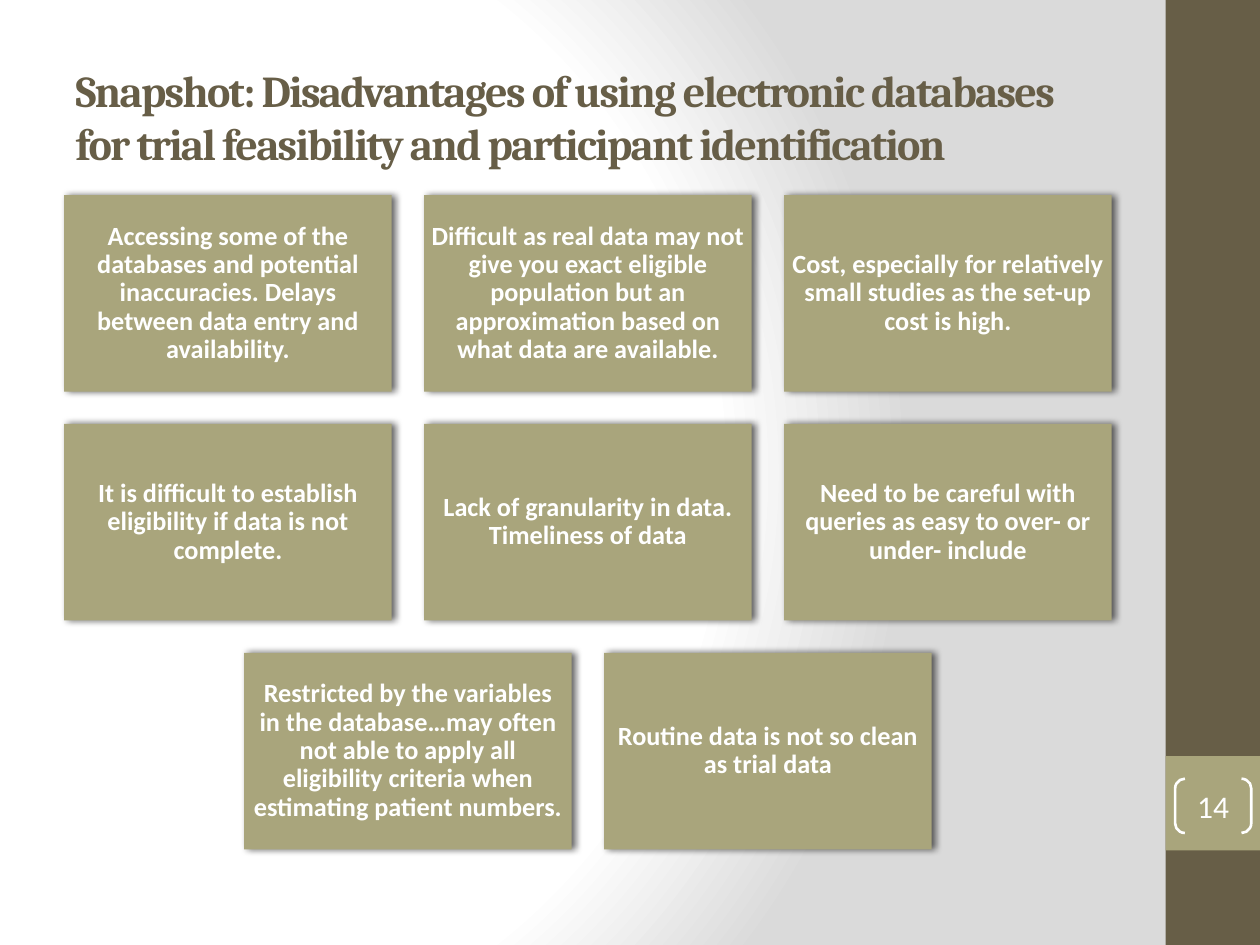
from dataclasses import dataclass

from lxml import etree
from pptx import Presentation
from pptx.dml.color import RGBColor
from pptx.enum.shapes import MSO_SHAPE
from pptx.enum.text import MSO_ANCHOR, MSO_AUTO_SIZE, PP_ALIGN
from pptx.oxml import parse_xml
from pptx.oxml.ns import nsdecls, qn
from pptx.util import Pt

RECT, BRACKETS = MSO_SHAPE.RECTANGLE, MSO_SHAPE.DOUBLE_BRACKET
LEFT, CENTER = PP_ALIGN.LEFT, PP_ALIGN.CENTER
MIDDLE = MSO_ANCHOR.MIDDLE
NO_AUTOFIT = MSO_AUTO_SIZE.NONE
TITLE_ONLY = 5


@dataclass(frozen=True)
class Theme:
    dark: str = "675E47"
    accent: str = "A9A57C"
    light: str = "FFFFFF"
    backdrop: str = "DADADA"
    shadow: str = "000000"
    heading_font: str = "Cambria"
    body_font: str = "Calibri"
    title_size: float = 25.2
    card_size: float = 15
    number_size: float = 18


class SlideBuilder:
    def __init__(self, slide, theme):
        self.s = slide
        self.theme = theme

    def background(self):
        t = self.theme
        stops = ((0, t.light), (75, t.light), (100, t.backdrop))
        gs = "".join(
            f'<a:gs pos="{pos * 1000}"><a:srgbClr val="{color}"/></a:gs>'
            for pos, color in stops
        )
        bg = parse_xml(
            f'<p:bg {nsdecls("p", "a")}><p:bgPr><a:gradFill rotWithShape="1">'
            f'<a:gsLst>{gs}</a:gsLst><a:path path="circle">'
            '<a:fillToRect l="20000" t="50000" r="100000" b="50000"/>'
            '</a:path></a:gradFill><a:effectLst/></p:bgPr></p:bg>'
        )
        self.s.element.find(qn("p:cSld")).insert(0, bg)

    def add_text(self, sp, text, size, color, font, bold=False, align=CENTER):
        tf = sp.text_frame
        tf.word_wrap = True
        tf.vertical_anchor = MIDDLE
        p = tf.paragraphs[0]
        p.alignment = align
        r = p.add_run()
        r.text = text
        r.font.name = font
        r.font.size = Pt(size)
        r.font.bold = bold
        r.font.color.rgb = RGBColor.from_string(color)
        return p

    def title(self, text, x, y, w, h):
        t = self.theme
        sp = self.s.shapes.title
        sp.left, sp.top, sp.width, sp.height = Pt(x), Pt(y), Pt(w), Pt(h)
        sp.text_frame.auto_size = NO_AUTOFIT
        self.add_text(sp, text, t.title_size, t.dark, t.heading_font, True, LEFT)
        for props in sp.element.iter(qn("a:rPr")):
            props.set("spc", "-100")

    def shape(self, kind, x, y, w, h, inset=0):
        sp = self.s.shapes.add_shape(kind, Pt(x), Pt(y), Pt(w), Pt(h))
        sp.shadow.inherit = False
        tf = sp.text_frame
        tf.margin_left = tf.margin_right = Pt(inset)
        tf.margin_top = tf.margin_bottom = Pt(inset)
        return sp

    def block(self, color, x, y, w, h, inset=0):
        sp = self.shape(RECT, x, y, w, h, inset)
        sp.fill.solid()
        sp.fill.fore_color.rgb = RGBColor.from_string(color)
        sp.line.fill.background()
        return sp

    def card(self, text, x, y, w, h):
        t = self.theme
        sp = self.block(t.accent, x, y, w, h, inset=4.3)
        effects = sp.element.spPr.find(qn("a:effectLst"))
        shadow = etree.SubElement(
            effects, qn("a:outerShdw"),
            blurRad=str(Pt(4)), dist=str(Pt(2)), dir="0", rotWithShape="0",
        )
        color = etree.SubElement(shadow, qn("a:srgbClr"), val=t.shadow)
        etree.SubElement(color, qn("a:alpha"), val="60000")
        p = self.add_text(sp, text, t.card_size, t.light, t.body_font, True)
        p.line_spacing = 0.9

    def page_number(self, text, x, y, w, h):
        t = self.theme
        sp = self.shape(BRACKETS, x, y, w, h)
        sp.adjustments[0] = 0.18
        sp.fill.background()
        sp.line.color.rgb = RGBColor.from_string(t.light)
        sp.line.width = Pt(1.5)
        self.add_text(sp, text, t.number_size, t.light, t.body_font)


CARD_ROWS = [
    [
        "Accessing some of the databases and potential inaccuracies. "
        "Delays between data entry and availability.",
        "Difficult as real data may not give you exact eligible population "
        "but an approximation based on what data are available.",
        "Cost, especially for relatively small studies as the set-up cost is high.",
    ],
    [
        "It is difficult to establish eligibility if data is not complete.",
        "Lack of granularity in data. Timeliness of data",
        "Need to be careful with queries as easy to over- or under- include",
    ],
    [
        "Restricted by the variables in the database…may often not able to apply "
        "all eligibility criteria when estimating patient numbers.",
        "Routine data is not so clean as trial data",
    ],
]
CARD_W, CARD_H, GAP = 187.2, 112.3, 18.5
GRID_CENTER, GRID_TOP = 336, 111.5


def main():
    prs = Presentation()
    prs.slide_width, prs.slide_height = Pt(720), Pt(540)
    theme = Theme()
    b = SlideBuilder(prs.slides.add_slide(prs.slide_layouts[TITLE_ONLY]), theme)

    # Background and side band
    b.background()
    b.block(theme.dark, 666, 0, 54, 540)
    b.block(theme.accent, 666, 432, 54, 54)

    # Title
    b.title(
        "Snapshot: Disadvantages of using electronic databases "
        "for trial feasibility and participant identification",
        36, 21.6, 600, 90,
    )

    # Cards, each row centred
    for i, row in enumerate(CARD_ROWS):
        row_w = len(row) * (CARD_W + GAP) - GAP
        for j, text in enumerate(row):
            x = GRID_CENTER - row_w / 2 + j * (CARD_W + GAP)
            b.card(text, x, GRID_TOP + i * (CARD_H + GAP), CARD_W, CARD_H)

    # Page number
    b.page_number("14", 671.5, 445, 43.5, 31)

    prs.save("out.pptx")


if __name__ == "__main__":
    main()
